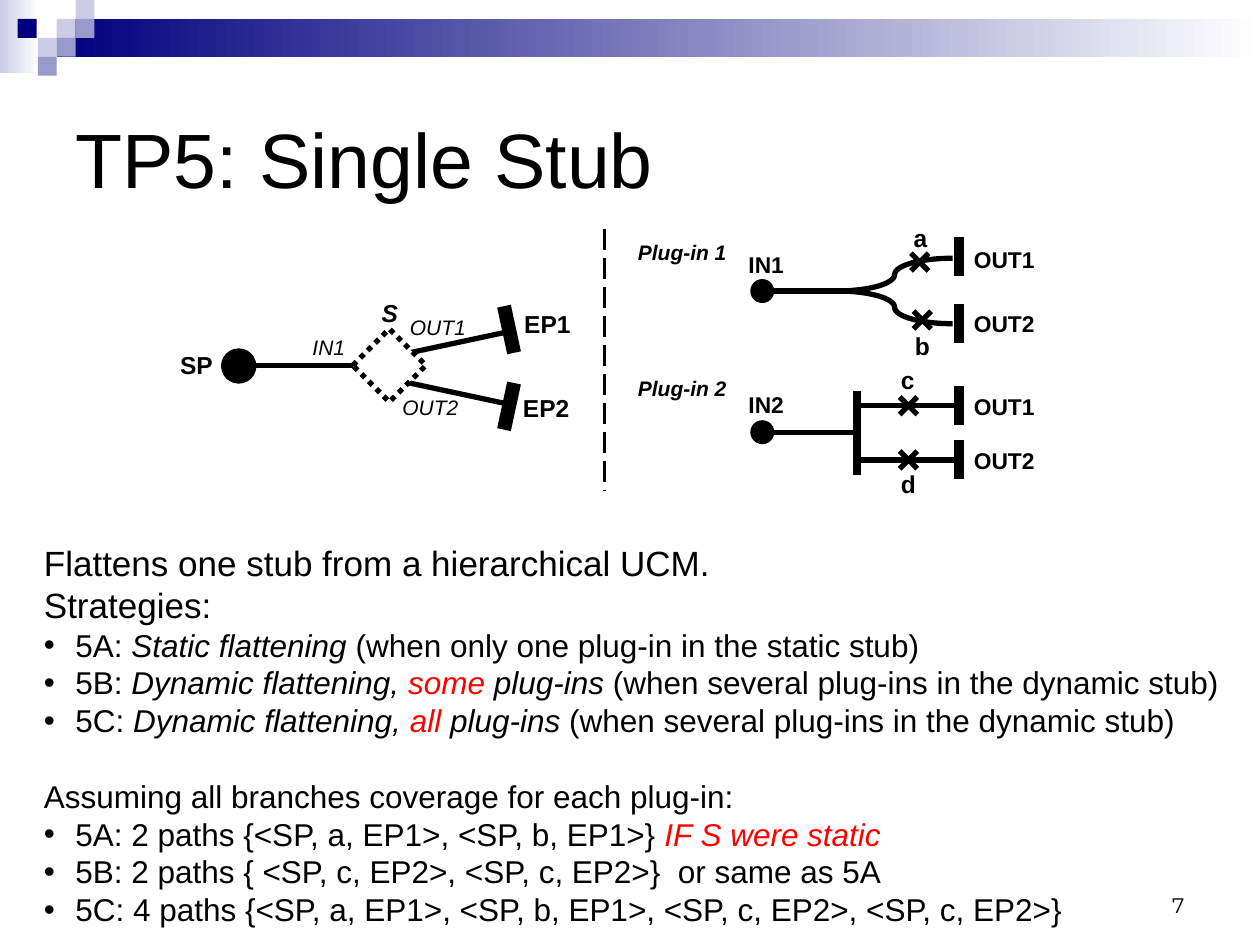
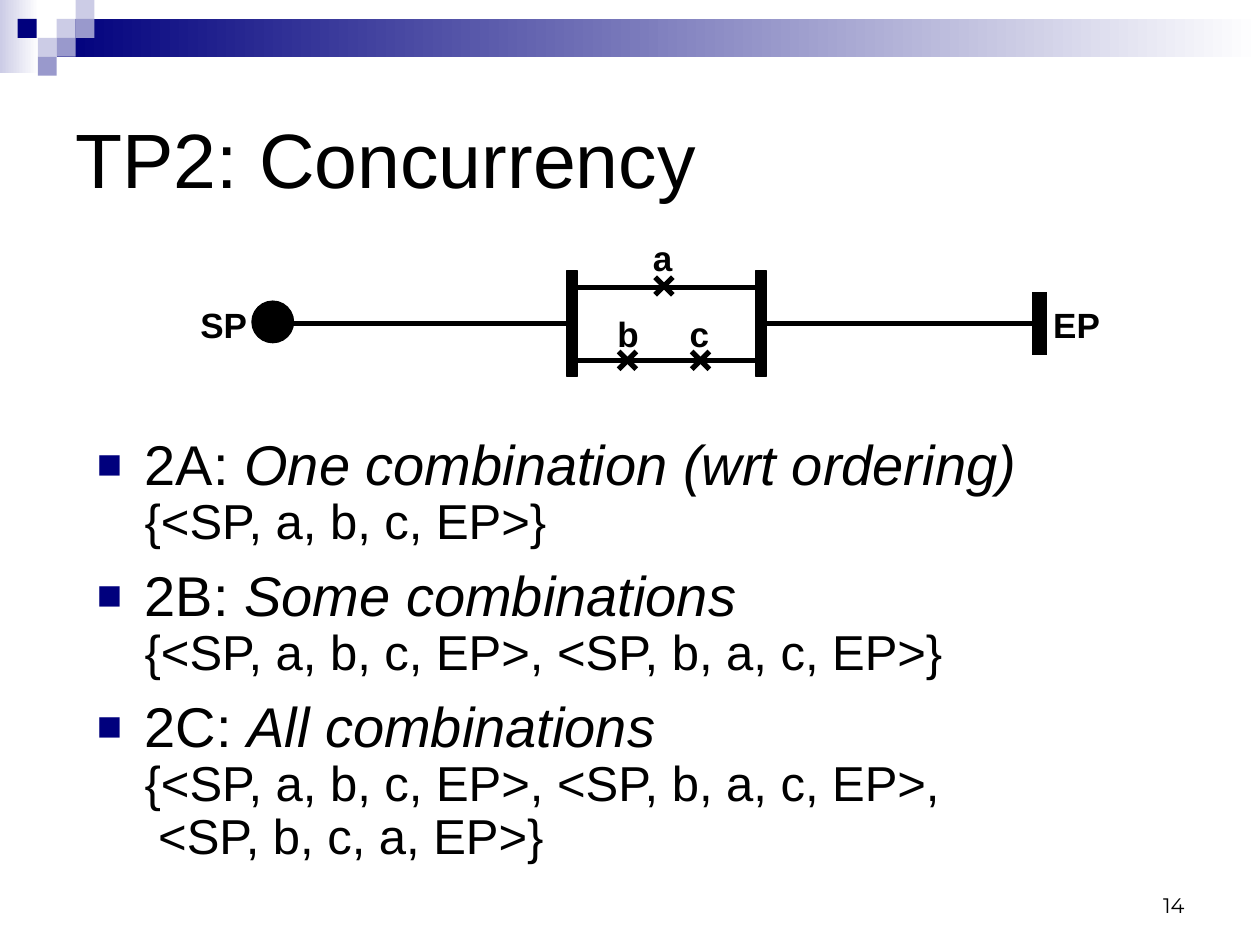
import pptx
import pptx.util
import pptx.dml.color
import pptx.enum.dml
import pptx.enum.shapes
import pptx.enum.text
import pptx.oxml
import pptx.oxml.ns
import lxml.etree
from typing import NamedTuple, Optional

Inches = pptx.util.Inches
Pt = pptx.util.Pt
Kind = pptx.enum.shapes.MSO_SHAPE
Align = pptx.enum.text.PP_ALIGN
Anchor = pptx.enum.text.MSO_ANCHOR
Dash = pptx.enum.dml.MSO_LINE

COLORS = {
    "black": "000000",
    "white": "FFFFFF",
    "red": "FF0000",
    "navy": "00007D",
    "mid": "9999CC",
    "pale": "CCCCE6",
}
FONT = "Arial"
TAG_HEIGHT = {12: 0.3, 13: 0.32, 14: 0.33, 20: 0.43}
CELL = 0.15


class Tag(NamedTuple):
    text: str
    left: float
    top: float
    width: float
    size: int = 14
    bold: bool = True
    slant: bool = False


class Line(NamedTuple):
    x1: float
    y1: float
    x2: float
    y2: float
    weight: float = 3
    dash: Optional[int] = None


class Tile(NamedTuple):
    left: float
    top: float
    color: str


class Bit(NamedTuple):
    text: str
    size: int = 18
    slant: bool = False
    color: str = "black"
    newline: bool = False


class Item(NamedTuple):
    bits: list[Bit]
    bullet: bool = True
    before: float = 0


class Bullet(NamedTuple):
    char: str
    indent: float
    color: str = "black"
    scale: int = 100


TILES = [
    Tile(0.45, 0.15, "pale"), Tile(0.6, 0, "pale"), Tile(0.6, 0.15, "mid"),
    Tile(0.3, 0.3, "pale"), Tile(0.14, 0.15, "navy"),
    Tile(0.45, 0.3, "mid"), Tile(0.3, 0.45, "mid"),
]


def rgb(name: str) -> pptx.dml.color.RGBColor:
    return pptx.dml.color.RGBColor.from_string(COLORS[name])


def style(run, size: int, color: str = "black", bold: bool = False,
          slant: bool = False, font: str = FONT) -> None:
    run.font.name = font
    run.font.size = Pt(size)
    run.font.bold = bold
    run.font.italic = slant
    run.font.color.rgb = rgb(color)


def block(slide, kind, left: float, top: float, width: float, height: float,
          color: str = "black", edge: float = 0):
    shape = slide.shapes.add_shape(
        kind, Inches(left), Inches(top), Inches(width), Inches(height))
    shape.shadow.inherit = False
    shape.fill.solid()
    shape.fill.fore_color.rgb = rgb(color)
    if edge:
        shape.line.color.rgb = rgb("black")
        shape.line.width = Pt(edge)
    else:
        shape.line.fill.background()
    return shape


def fade(slide, left: float, top: float, width: float, height: float,
         color: str) -> None:
    shape = block(slide, Kind.RECTANGLE, left, top, width, height)
    shape.fill.gradient()
    shape.fill.gradient_angle = 0
    for stop, name in zip(shape.fill.gradient_stops, (color, "white")):
        stop.color.rgb = rgb(name)


def draw(slide, line: Line):
    link = slide.shapes.add_connector(
        pptx.enum.shapes.MSO_CONNECTOR.STRAIGHT,
        Inches(line.x1), Inches(line.y1), Inches(line.x2), Inches(line.y2))
    link.line.color.rgb = rgb("black")
    link.line.width = Pt(line.weight)
    if line.dash is not None:
        link.line.dash_style = line.dash
    lxml.etree.SubElement(
        link._element.spPr, pptx.oxml.ns.qn("a:effectLst"))
    return link


def cross(slide, x: float, y: float, half: float = 0.07) -> None:
    for tilt in (half, -half):
        draw(slide, Line(x - half, y - tilt, x + half, y + tilt))


def dot(slide, left: float, top: float, size: float) -> None:
    block(slide, Kind.OVAL, left, top, size, size, edge=0.75)


def label(slide, tag: Tag) -> None:
    box = slide.shapes.add_textbox(
        Inches(tag.left), Inches(tag.top),
        Inches(tag.width), Inches(TAG_HEIGHT[tag.size]))
    frame = box.text_frame
    frame.word_wrap = False
    frame.text = tag.text
    para = frame.paragraphs[0]
    para.alignment = Align.CENTER
    style(para.runs[0], tag.size, bold=tag.bold, slant=tag.slant)


def branch(slide, sign: int) -> None:
    x, y, reach, rise = 6.64, 2.31, 0.46, 0.13 * sign
    steps = 16
    half = []
    for i in range(steps + 1):
        t = i / steps
        across = 3 * 0.56 * t * (1 - t) ** 2 + 3 * t * t * (1 - t) + t ** 3
        up = 3 * 0.45 * t * t * (1 - t) + t ** 3
        half.append((reach * across, rise * up))
    rest = [(2 * reach - dx, 2 * rise - dy) for dx, dy in reversed(half)]
    points = [(Inches(x + dx), Inches(y + dy)) for dx, dy in half + rest[1:]]
    path = slide.shapes.build_freeform(*points[0], scale=1.0)
    path.add_line_segments(points[1:], close=False)
    curve = path.convert_to_shape()
    curve.shadow.inherit = False
    curve.fill.background()
    curve.line.color.rgb = rgb("black")
    curve.line.width = Pt(3)


def mark(para, bullet: Bullet, shown: bool) -> None:
    props = para._p.get_or_add_pPr()
    props.set("marL", str(Inches(bullet.indent)))
    props.set("indent", str(-Inches(bullet.indent)))
    if not shown:
        return
    space = pptx.oxml.ns.nsdecls("a")
    for part in (
        f'<a:buClr {space}><a:srgbClr val="{COLORS[bullet.color]}"/></a:buClr>',
        f'<a:buSzPct {space} val="{bullet.scale * 1000}"/>',
        f'<a:buFont {space} typeface="{FONT}"/>',
        f'<a:buChar {space} char="{bullet.char}"/>',
    ):
        props.append(pptx.oxml.parse_xml(part))


def prose(slide, left: float, top: float, width: float, height: float,
          items: list[Item], bullet: Bullet, pitch: float = 1.0) -> None:
    box = slide.shapes.add_textbox(
        Inches(left), Inches(top), Inches(width), Inches(height))
    frame = box.text_frame
    frame.word_wrap = True
    for i, item in enumerate(items):
        para = frame.add_paragraph() if i else frame.paragraphs[0]
        para.line_spacing = pitch
        para.space_before = Pt(item.before)
        mark(para, bullet, item.bullet)
        for bit in item.bits:
            if bit.newline:
                para.add_line_break()
            run = para.add_run()
            run.text = bit.text
            style(run, bit.size, bit.color, slant=bit.slant)


def start(deck, title: str, number: int):
    slide = deck.slides.add_slide(deck.slide_layouts[5])
    fade(slide, 0, 0, 0.31, 0.58, "pale")
    fade(slide, 0.45, 0.15, 9.55, 0.3, "navy")
    for tile in TILES:
        block(slide, Kind.RECTANGLE, tile.left, tile.top, CELL, CELL, tile.color)
    head = slide.shapes.title
    head.left, head.top = Inches(0.5), Inches(0.5)
    head.width, head.height = Inches(9), Inches(1.5)
    page = slide.shapes.add_textbox(
        Inches(7.17), Inches(6.83), Inches(2.33), Inches(0.5))
    for shape, text, size, font, align, anchor in (
        (head, title, 44, FONT, Align.LEFT, Anchor.MIDDLE),
        (page, str(number), 12, "Montserrat", Align.RIGHT, Anchor.BOTTOM),
    ):
        frame = shape.text_frame
        frame.word_wrap = True
        frame.vertical_anchor = anchor
        frame.text = text
        frame.paragraphs[0].alignment = align
        style(frame.paragraphs[0].runs[0], size, font=font)
    return slide


def stub(deck) -> None:
    slide = start(deck, "TP5: Single Stub", 7)
    dot(slide, 1.76, 2.77, 0.27)
    entry = draw(slide, Line(1.88, 2.9, 2.8, 2.9))
    axis = 2.92
    for sign in (-1, 1):
        draw(slide, Line(4, axis + 0.49 * sign, 4.08, axis + 0.12 * sign, 8))
        draw(slide, Line(3.25, axis + 0.12 * sign, 4, axis + 0.28 * sign))
        branch(slide, sign)
    gem = block(slide, Kind.DIAMOND, 2.8, 2.61, 0.58, 0.58, "white", 3)
    gem.line.dash_style = Dash.ROUND_DOT
    entry.end_connect(gem, 1)
    draw(slide, Line(4.8, 1.82, 4.8, 3.9, 1.5, Dash.LONG_DASH))

    for y in (2.31, 3.43):
        dot(slide, 5.96, y - 0.09, 0.18)
        draw(slide, Line(6.13, y, 6.8, y))
    draw(slide, Line(6.8, 3.1, 6.8, 3.77, 4.5))
    for y in (3.22, 3.65):
        draw(slide, Line(6.8, y, 7.63, y))
    for top in (1.88, 2.41, 3.06, 3.49):
        draw(slide, Line(7.61, top, 7.61, top + 0.31, 6))
    for x, y in ((7.3, 2.08), (7.32, 2.54), (7.21, 3.22), (7.21, 3.65)):
        cross(slide, x, y)

    for tag in (
        Tag("SP", 1.33, 2.73, 0.46),
        Tag("S", 2.93, 2.32, 0.33, slant=True),
        Tag("EP1", 4.06, 2.4, 0.57),
        Tag("EP2", 4.05, 3.07, 0.57),
        Tag("a", 7.15, 1.72, 0.31),
        Tag("b", 7.16, 2.58, 0.32),
        Tag("c", 7.05, 2.85, 0.31),
        Tag("d", 7.05, 3.67, 0.32),
        Tag("IN1", 2.38, 2.61, 0.46, 12, False, True),
        Tag("OUT1", 3.15, 2.45, 0.65, 12, False, True),
        Tag("OUT2", 3.09, 3.08, 0.65, 12, False, True),
        Tag("Plug-in 1", 4.96, 1.85, 0.91, 12, True, True),
        Tag("Plug-in 2", 4.96, 2.93, 0.91, 12, True, True),
        Tag("IN1", 5.84, 1.94, 0.48, 13),
        Tag("IN2", 5.84, 3.05, 0.48, 13),
        Tag("OUT1", 7.63, 1.9, 0.68, 13),
        Tag("OUT2", 7.63, 2.41, 0.68, 13),
        Tag("OUT1", 7.63, 3.07, 0.68, 13),
        Tag("OUT2", 7.63, 3.5, 0.68, 13),
    ):
        label(slide, tag)

    dynamic = [
        Item([Bit(f"{code}: "), Bit("Dynamic flattening, ", slant=True),
              Bit(f"{scope} ", slant=True, color="red"),
              Bit("plug-ins", slant=True),
              Bit(" (when several plug-ins in the dynamic stub)")])
        for code, scope in (("5B", "some"), ("5C", "all"))
    ]
    prose(slide, 0.25, 4.25, 9.75, 3.2, [
        Item([Bit("Flattens one stub from a hierarchical UCM.", 20)], False),
        Item([Bit("Strategies:", 20)], False),
        Item([Bit("5A: "), Bit("Static flattening", slant=True),
              Bit(" (when only one plug-in in the static stub)")]),
        *dynamic,
        Item([Bit("Assuming all branches coverage for each plug-in:")],
             False, 21.6),
        Item([Bit("5A: 2 paths {<SP, a, EP1>, <SP, b, EP1>} "),
              Bit("IF S were static", slant=True, color="red")]),
        Item([Bit("5B: 2 paths { <SP, c, EP2>, <SP, c, EP2>}  or same as 5A")]),
        Item([Bit("5C: 4 paths {<SP, a, EP1>, <SP, b, EP1>, "
                  "<SP, c, EP2>, <SP, c, EP2>}")]),
    ], Bullet("•", 0.25))


def fork(deck) -> None:
    slide = start(deck, "TP2: Concurrency", 14)
    dot(slide, 2, 2.39, 0.33)
    split, join = [
        block(slide, Kind.RECTANGLE, x, 2.15, 0.08, 0.84, edge=0.75)
        for x in (4.5, 6)
    ]
    draw(slide, Line(2.08, 2.57, 4.5, 2.57)).end_connect(split, 1)
    draw(slide, Line(6.08, 2.57, 8.25, 2.57)).begin_connect(join, 3)
    draw(slide, Line(8.25, 2.32, 8.25, 2.82, 9))
    for y in (2.28, 2.86):
        draw(slide, Line(4.58, y, 6, y))
    for x, y in ((5.27, 2.27), (4.98, 2.86), (5.56, 2.86)):
        cross(slide, x, y)
    for text, left, top, width in (
        ("SP", 1.49, 2.36, 0.57), ("EP", 8.26, 2.36, 0.57),
        ("a", 5.08, 1.83, 0.36), ("b", 4.8, 2.43, 0.37),
        ("c", 5.37, 2.43, 0.36),
    ):
        label(slide, Tag(text, left, top, width, 20))

    cases = (
        ("2A: ", "One combination (wrt ordering)", ["{<SP, a, b, c, EP>}"]),
        ("2B: ", "Some combinations",
         ["{<SP, a, b, c, EP>, <SP, b, a, c, EP>}"]),
        ("2C: ", "All combinations",
         ["{<SP, a, b, c, EP>, <SP, b, a, c, EP>,", " <SP, b, c, a, EP>}"]),
    )
    prose(slide, 0.67, 3.42, 8.67, 3.67, [
        Item([Bit(code, 32), Bit(name, 32, True),
              *[Bit(row, 28, newline=True) for row in rows]], before=10)
        for code, name, rows in cases
    ], Bullet("■", 0.38, "navy", 75), 0.9)


def main() -> None:
    deck = pptx.Presentation()
    deck.slide_width, deck.slide_height = Inches(10), Inches(7.5)
    stub(deck)
    fork(deck)
    deck.save("out.pptx")


if __name__ == "__main__":
    main()
